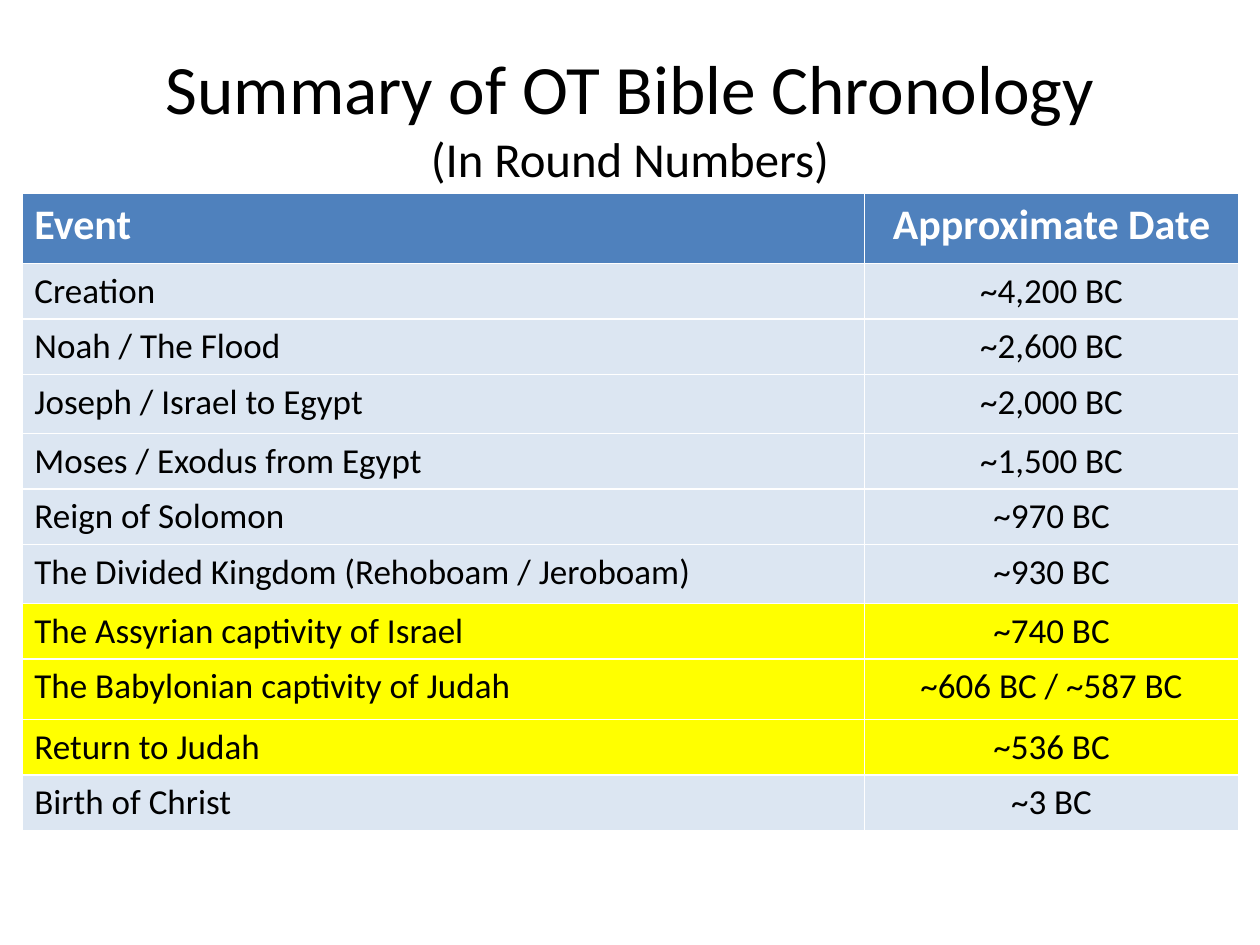
from pptx import Presentation
from pptx import util as u
from pptx.dml import color
from pptx.enum import text

COLORS = {
    "header": "4F81BD",
    "plain": "DCE6F2",
    "captivity": "FFFF00",
    "light": "FFFFFF",
    "dark": "000000",
}
ROWS = [
    ("Event", "Approximate Date", "header", 1.42),
    ("Creation", "~4,200 BC", "plain", 1.07),
    ("Noah / The Flood", "~2,600 BC", "plain", 1.02),
    ("Joseph / Israel to Egypt", "~2,000 BC", "plain", 1.19),
    ("Moses / Exodus from Egypt", "~1,500 BC", "plain", 1.07),
    ("Reign of Solomon", "~970 BC", "plain", 1.02),
    ("The Divided Kingdom (Rehoboam / Jeroboam)", "~930 BC", "plain", 1.19),
    ("The Assyrian captivity of Israel", "~740 BC", "captivity", 1.07),
    ("The Babylonian captivity of Judah", "~606 BC / ~587 BC", "captivity", 1.22),
    ("Return to Judah", "~536 BC", "captivity", 1.07),
    ("Birth of Christ", "~3 BC", "plain", 1.02),
]
COLUMN_WIDTHS = [16.99, 7.54]
ALIGNMENTS = [text.PP_ALIGN.LEFT, text.PP_ALIGN.CENTER]


def format_run(run, size, color_name, bold=False):
    run.font.name = "Calibri"
    run.font.size = u.Pt(size)
    run.font.bold = bold
    run.font.color.rgb = color.RGBColor.from_string(COLORS[color_name])


presentation = Presentation()
presentation.slide_width = u.Cm(25.4)
presentation.slide_height = u.Cm(19.05)
slide = presentation.slides.add_slide(presentation.slide_layouts[5])

title = slide.shapes.title
title.left, title.top = u.Cm(1.27), u.Cm(0.76)
title.width, title.height = u.Cm(22.86), u.Cm(3.18)
title.text_frame.text = "Summary of OT Bible Chronology\v(In Round Numbers)"
title.text_frame.vertical_anchor = text.MSO_ANCHOR.MIDDLE
paragraph = title.text_frame.paragraphs[0]
paragraph.alignment = text.PP_ALIGN.CENTER
for run, size in zip(paragraph.runs, (39.6, 27.9)):
    format_run(run, size, "dark")

table = slide.shapes.add_table(
    len(ROWS), len(COLUMN_WIDTHS), u.Cm(0.44), u.Cm(3.89),
    u.Cm(sum(COLUMN_WIDTHS)), u.Cm(sum(row[3] for row in ROWS)),
).table
for column, width in zip(table.columns, COLUMN_WIDTHS):
    column.width = u.Cm(width)

for row, (event, date, fill_name, height) in zip(table.rows, ROWS):
    row.height = u.Cm(height)
    is_header = fill_name == "header"
    for cell, content, alignment in zip(row.cells, (event, date), ALIGNMENTS):
        cell.fill.solid()
        cell.fill.fore_color.rgb = color.RGBColor.from_string(COLORS[fill_name])
        paragraph = cell.text_frame.paragraphs[0]
        paragraph.text = content
        paragraph.alignment = alignment
        format_run(paragraph.runs[0], 24 if is_header else 20,
                   "light" if is_header else "dark", is_header)

presentation.save("out.pptx")
